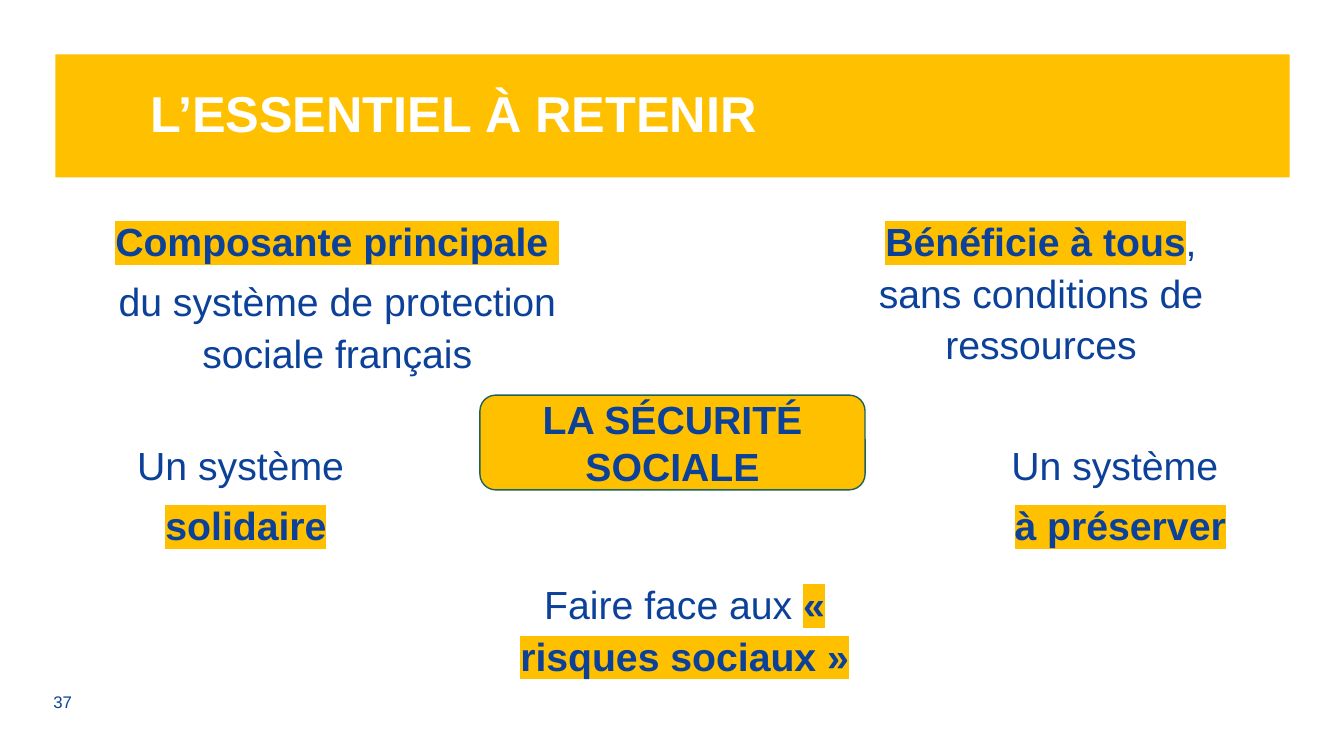
from pptx import Presentation
from pptx import util as u
from pptx.dml.color import RGBColor
from pptx.enum import shapes, text
from pptx.oxml import parse_xml
from pptx.oxml.ns import nsdecls

PX = 9144
FONT = "Arial"
COLORS = {"gold": "FFC000", "blue": "0C419A", "green": "1E6259", "white": "FFFFFF"}

TITLE_BOX = (55, 54, 1224, 122)
CENTER_BOX = (476, 392, 382, 94)
NUMBER_BOX = (43, 681, 79, 31)
IDEAS = [
    ((55, 206, 534, 139), [[("Composante principale ", True)],
                           [("du système de protection sociale français", False)]]),
    ((823, 206, 394, 122), [[("Bénéficie à tous", True),
                             (", sans conditions de ressources", False)]]),
    ((431, 566, 471, 147), [[("Faire face aux ", False), ("« risques sociaux »", True)]]),
    ((68, 428, 327, 139), [[("Un système ", False)], [("solidaire", True)]]),
    ((863, 428, 471, 115), [[("Un système ", False)], [("à préserver", True)]]),
]


def px(lengths):
    return [u.Emu(length * PX) for length in lengths]


def rgb(name):
    return RGBColor.from_string(COLORS[name])


def add_text(paragraph, words, size=28, color="blue", bold=False, highlight=None):
    run = paragraph.add_run()
    run.text = words
    font = run.font
    font.size = u.Pt(size)
    font.bold = bold
    font.color.rgb = rgb(color)
    font.name = FONT
    if highlight:
        marker = parse_xml(
            f'<a:highlight {nsdecls("a")}><a:srgbClr val="{COLORS[highlight]}"/></a:highlight>')
        run._r.get_or_add_rPr().find(
            "{http://schemas.openxmlformats.org/drawingml/2006/main}solidFill").addnext(marker)


def format_frame(shape, anchor=text.MSO_ANCHOR.TOP, insets=(10, 5, 10, 5)):
    frame = shape.text_frame
    frame.word_wrap = True
    frame.auto_size = text.MSO_AUTO_SIZE.NONE
    frame.vertical_anchor = anchor
    (frame.margin_left, frame.margin_top,
     frame.margin_right, frame.margin_bottom) = px(insets)
    return frame


def add_title(slide, box):
    title = slide.shapes.title
    title.left, title.top, title.width, title.height = px(box)
    title.fill.solid()
    title.fill.fore_color.rgb = rgb("gold")
    frame = format_frame(title, text.MSO_ANCHOR.MIDDLE, (94, 8, 8, 8))
    paragraph = frame.paragraphs[0]
    paragraph.alignment = text.PP_ALIGN.LEFT
    paragraph.line_spacing = 0.9
    add_text(paragraph, "L’ESSENTIEL À RETENIR", size=36, color="white", bold=True)


def add_idea(slide, box, lines):
    frame = format_frame(slide.shapes.add_textbox(*px(box)))
    for index, line in enumerate(lines):
        paragraph = frame.add_paragraph() if index else frame.paragraphs[0]
        paragraph.alignment = text.PP_ALIGN.CENTER
        paragraph.line_spacing = 1.1
        paragraph.space_before = u.Pt(6)
        properties = paragraph._p.get_or_add_pPr()
        properties.set("marL", str(25 * PX))
        properties.set("indent", "0")
        for words, key in line:
            add_text(paragraph, words, bold=key, highlight="gold" if key else None)


def add_center(slide, box):
    shape = slide.shapes.add_shape(shapes.MSO_SHAPE.ROUNDED_RECTANGLE, *px(box))
    shape.shadow.inherit = False
    shape.fill.solid()
    shape.fill.fore_color.rgb = rgb("gold")
    shape.line.color.rgb = rgb("green")
    shape.line.width = u.Pt(1)
    paragraph = format_frame(shape, text.MSO_ANCHOR.MIDDLE).paragraphs[0]
    paragraph.alignment = text.PP_ALIGN.CENTER
    add_text(paragraph, "LA SÉCURITÉ SOCIALE", bold=True)


def add_number(slide, box):
    frame = format_frame(slide.shapes.add_textbox(*px(box)), text.MSO_ANCHOR.MIDDLE)
    add_text(frame.paragraphs[0], "37", size=12)


def main():
    presentation = Presentation()
    presentation.slide_width, presentation.slide_height = px((1333, 750))
    slide = presentation.slides.add_slide(presentation.slide_layouts[5])
    add_title(slide, TITLE_BOX)
    for box, lines in IDEAS:
        add_idea(slide, box, lines)
    add_center(slide, CENTER_BOX)
    add_number(slide, NUMBER_BOX)
    presentation.save("out.pptx")


if __name__ == "__main__":
    main()
